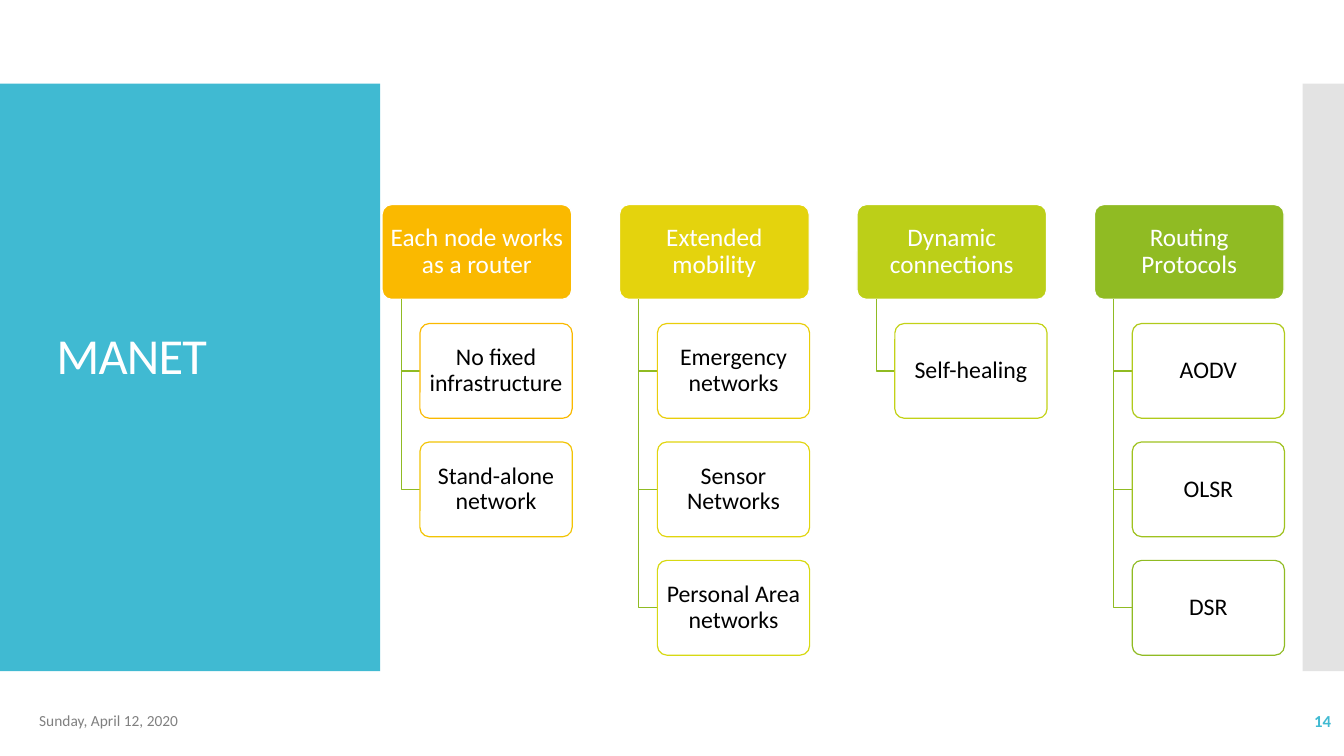
from lxml import etree
from pptx import Presentation
from pptx.dml.color import RGBColor
from pptx.enum.shapes import MSO_SHAPE as Shape
from pptx.enum.text import MSO_ANCHOR as Anchor, PP_ALIGN as Align
from pptx.oxml.ns import qn
from pptx.util import Inches, Pt

# Content: heading, heading fill, then (child, outline colour)
TITLE = "MANET"
DATE = "Sunday, April 12, 2020"
NUMBER = "14"
BRANCHES = [
    ("Each node works as a router", "FAB900",
     [("No fixed infrastructure", "FAB900"), ("Stand-alone network", "F2C405")]),
    ("Extended mobility", "E4D30D",
     [("Emergency networks", "E9CE0A"), ("Sensor Networks", "E1D50E"),
      ("Personal Area networks", "D7D913")]),
    ("Dynamic connections", "BCCF18", [("Self-healing", "C3D217")]),
    ("Routing Protocols", "90BB23",
     [("AODV", "B0CA1B"), ("OLSR", "9FC21F"), ("DSR", "90BB23")]),
]

THEME = {
    "font": "Calibri", "white": "FFFFFF", "black": "000000",
    "accent": "40BAD2", "side": "C8C8C8", "muted": "808080", "branch": "90BB23",
    "title": 36, "heading": 18, "child": 17, "number": 12, "date": 11,
    "line": 0.85,
}

# Diagram geometry in inches
LEFT, TOP, COLUMN_STEP = 3.79, 2.03, 2.355
HEADING_WIDTH, CHILD_WIDTH, BOX_HEIGHT = 1.88, 1.51, 0.94
CHILD_TOP, ROW_STEP = 3.21, 1.175
TRUNK_OFFSET, CHILD_OFFSET = 0.19, 0.375


def color(name):
    return RGBColor.from_string(THEME.get(name, name))


def write(shape, text, size, ink, align=Align.LEFT, bold=False, spacing=None,
          line_spacing=None, insets=(0.1, 0.05)):
    frame = shape.text_frame
    frame.word_wrap = True
    frame.vertical_anchor = Anchor.MIDDLE
    frame.margin_left = frame.margin_right = Inches(insets[0])
    frame.margin_top = frame.margin_bottom = Inches(insets[1])
    paragraph = frame.paragraphs[0]
    paragraph.alignment = align
    if line_spacing:
        paragraph.line_spacing = line_spacing
    run = paragraph.add_run()
    run.text = text
    run.font.name = THEME["font"]
    run.font.size = Pt(THEME[size])
    run.font.bold = bold
    run.font.color.rgb = color(ink)
    if spacing is not None:
        run.font._element.set("spc", str(int(spacing * 100)))


def add_box(slide, kind, place, fill, line=None, opacity=None):
    shape = slide.shapes.add_shape(kind, *map(Inches, place))
    shape.shadow.inherit = False
    shape.fill.solid()
    shape.fill.fore_color.rgb = color(fill)
    if opacity is not None:
        fill_color = shape._element.spPr.find(qn("a:solidFill"))[0]
        etree.SubElement(fill_color, qn("a:alpha")).set("val", str(opacity * 1000))
    if line:
        shape.line.color.rgb = color(line)
        shape.line.width = Pt(THEME["line"])
    else:
        shape.line.fill.background()
    return shape


def add_node(slide, place, text, size, ink, fill, line, opacity=None):
    node = add_box(slide, Shape.ROUNDED_RECTANGLE, place, fill, line, opacity)
    node.adjustments[0] = 0.1
    write(node, text, size, ink, align=Align.CENTER, line_spacing=0.9,
          insets=(0.04, 0.03))


def add_elbow(slide, x, top, bottom, right):
    builder = slide.shapes.build_freeform(Inches(x), Inches(top))
    builder.add_line_segments(
        [(Inches(x), Inches(bottom)), (Inches(right), Inches(bottom))], close=False)
    elbow = builder.convert_to_shape()
    elbow.shadow.inherit = False
    elbow.fill.background()
    elbow.line.color.rgb = color("branch")
    elbow.line.width = Pt(THEME["line"])


def add_label(slide, place, text, size, ink, **style):
    label = slide.shapes.add_textbox(*map(Inches, place))
    write(label, text, size, ink, **style)


def main():
    presentation = Presentation()
    presentation.slide_width = Inches(13.33)
    presentation.slide_height = Inches(7.5)
    slide = presentation.slides.add_slide(presentation.slide_layouts[6])

    # Side panels and title
    add_box(slide, Shape.RECTANGLE, (0, 0.83, 3.77, 5.83), "accent")
    add_box(slide, Shape.RECTANGLE, (12.92, 0.83, 0.41, 5.83), "side", opacity=50)
    add_label(slide, (0.46, 2.97, 10.81, 1.17), TITLE, "title", "white",
              spacing=-0.6, line_spacing=0.9)

    # Four branches, each a heading with children hanging from a trunk
    for column, (heading, fill, children) in enumerate(BRANCHES):
        left = LEFT + column * COLUMN_STEP
        add_node(slide, (left, TOP, HEADING_WIDTH, BOX_HEIGHT), heading,
                 "heading", "white", fill, "white")
        child_left = left + CHILD_OFFSET
        for row, (child, outline) in enumerate(children):
            child_top = CHILD_TOP + row * ROW_STEP
            add_elbow(slide, left + TRUNK_OFFSET, TOP + BOX_HEIGHT,
                      child_top + BOX_HEIGHT / 2, child_left)
            add_node(slide, (child_left, child_top, CHILD_WIDTH, BOX_HEIGHT), child,
                     "child", "black", "white", outline, opacity=90)

    # Footer
    add_label(slide, (11.63, 6.95, 1.67, 0.4), NUMBER, "number", "accent",
              align=Align.RIGHT, bold=True)
    add_label(slide, (0.29, 6.95, 3, 0.4), DATE, "date", "muted")

    presentation.save("out.pptx")


if __name__ == "__main__":
    main()
